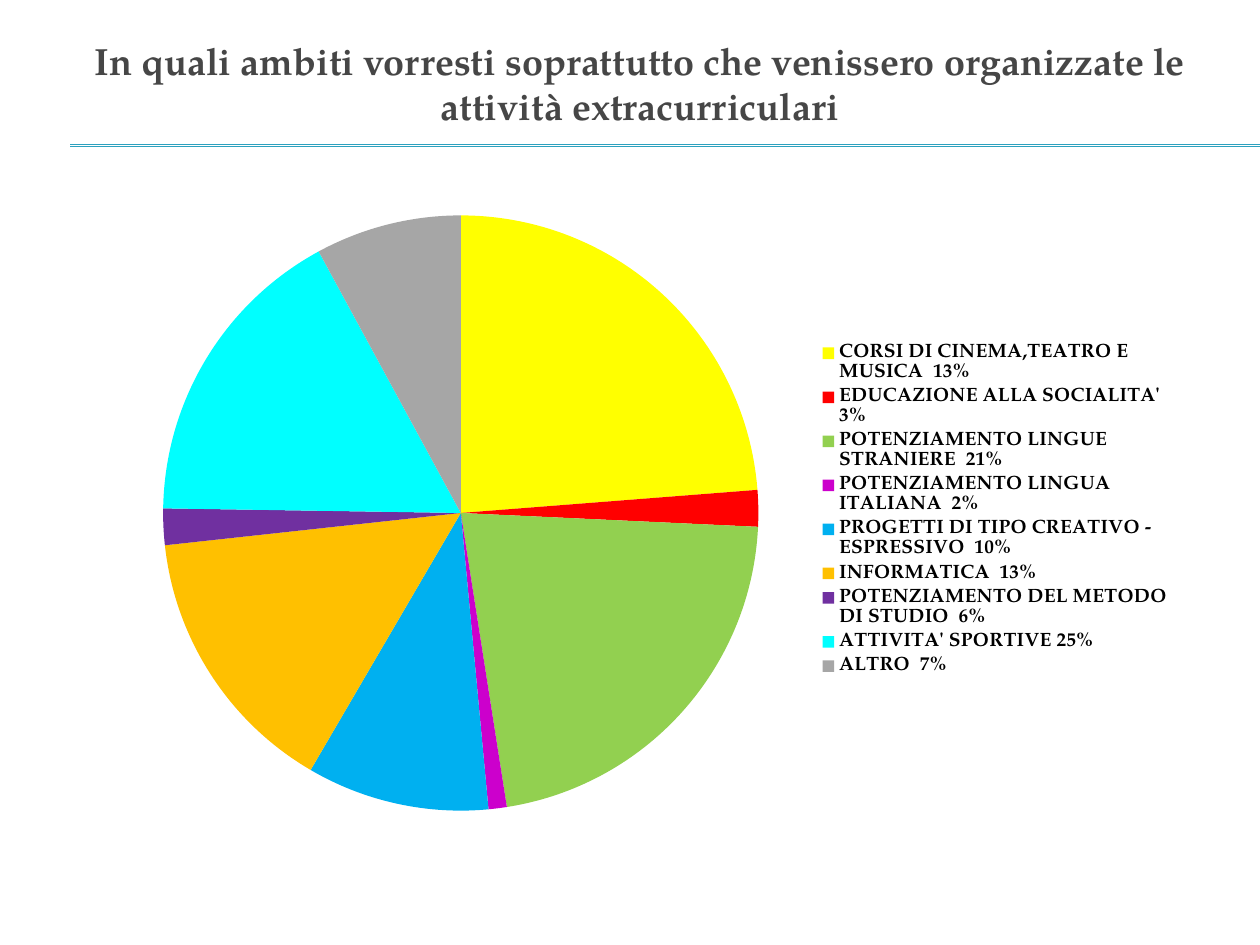
from dataclasses import dataclass

import lxml.etree
import pptx
import pptx.chart.data
import pptx.dml.color
import pptx.enum.chart
import pptx.enum.shapes
import pptx.enum.text
import pptx.oxml
import pptx.oxml.ns
import pptx.util
from pptx.dml.color import RGBColor
from pptx.util import Cm, Pt

FONT = "TeX Gyre Pagella"
TITLE_GRAY = RGBColor(0x46, 0x46, 0x46)
RULE_TEAL = RGBColor(0x2D, 0xA2, 0xBF)
BLACK = RGBColor(0, 0, 0)


@dataclass(frozen=True)
class Activity:
    label: str
    value: int
    color: RGBColor


ACTIVITIES = [
    Activity("CORSI DI CINEMA,TEATRO E MUSICA  13%", 24, RGBColor(0xFF, 0xFF, 0x00)),
    Activity("EDUCAZIONE ALLA SOCIALITA'  3%", 2, RGBColor(0xFF, 0x00, 0x00)),
    Activity("POTENZIAMENTO LINGUE STRANIERE  21%", 22, RGBColor(0x92, 0xD0, 0x50)),
    Activity("POTENZIAMENTO LINGUA ITALIANA  2%", 1, RGBColor(0xCC, 0x00, 0xCC)),
    Activity("PROGETTI DI TIPO CREATIVO - ESPRESSIVO  10%", 10, RGBColor(0x00, 0xB0, 0xF0)),
    Activity("INFORMATICA  13%", 15, RGBColor(0xFF, 0xC0, 0x00)),
    Activity("POTENZIAMENTO DEL METODO DI STUDIO  6%", 2, RGBColor(0x70, 0x30, 0xA0)),
    Activity("ATTIVITA' SPORTIVE 25%", 17, RGBColor(0x00, 0xFF, 0xFF)),
    Activity("ALTRO  7%", 8, RGBColor(0xA6, 0xA6, 0xA6)),
]


def add_rule(page, top: float) -> None:
    """Draw a thin line from the left margin to the right edge."""
    rule = page.shapes.add_connector(
        pptx.enum.shapes.MSO_CONNECTOR.STRAIGHT, Cm(1.42), Cm(top), Cm(25.4), Cm(top))
    rule.line.color.rgb = RULE_TEAL
    rule.line.width = Pt(0.75)
    effects = pptx.oxml.ns.qn("a:effectLst")
    lxml.etree.SubElement(rule.element.spPr, effects)


def make_layout(x: float, y: float, w: float, h: float, inner: bool = False):
    """Return a manual chart layout, in fractions of the chart."""
    target = '<c:layoutTarget val="inner"/>' if inner else ""
    modes = '<c:xMode val="edge"/><c:yMode val="edge"/>'
    sizes = "".join(f'<c:{name} val="{value}"/>'
                    for name, value in zip("xywh", (x, y, w, h)))
    return pptx.oxml.parse_xml(
        f'<c:layout {pptx.oxml.ns.nsdecls("c")}><c:manualLayout>'
        f"{target}{modes}{sizes}</c:manualLayout></c:layout>")


def add_title(page, text: str) -> None:
    box = page.shapes.title
    box.left, box.top, box.width, box.height = Cm(0.84), Cm(0.58), Cm(24.13), Cm(2.18)
    frame = box.text_frame
    frame.text = text
    frame.word_wrap = True
    frame.vertical_anchor = pptx.enum.text.MSO_ANCHOR.MIDDLE
    para = frame.paragraphs[0]
    para.alignment = pptx.enum.text.PP_ALIGN.CENTER
    font = para.runs[0].font
    font.name, font.size, font.bold = FONT, Pt(21.6), True
    font.color.rgb = TITLE_GRAY


def add_pie(page, activities: list[Activity]) -> None:
    data = pptx.chart.data.CategoryChartData()
    data.categories = [activity.label for activity in activities]
    data.add_series("Series 1", [activity.value for activity in activities])
    chart = page.shapes.add_chart(
        pptx.enum.chart.XL_CHART_TYPE.PIE,
        Cm(1.98), Cm(3.89), Cm(21.82), Cm(12.78), data).chart
    chart.has_title = False
    chart.font.name, chart.font.size = FONT, Pt(18)
    chart.font.color.rgb = BLACK

    # Slice colours
    plot = chart.plots[0]
    plot.vary_by_categories = True
    for index, activity in enumerate(activities):
        fill = plot.series[0].points[index].format.fill
        fill.solid()
        fill.fore_color.rgb = activity.color

    # Legend
    chart.has_legend = True
    legend = chart.legend
    legend.position = pptx.enum.chart.XL_LEGEND_POSITION.RIGHT
    legend.include_in_layout = True
    legend.font.name, legend.font.size, legend.font.bold = FONT, Pt(11), True
    legend.font.color.rgb = BLACK

    # Fixed places for the pie and the legend
    for layout in chart.element.xpath(".//c:plotArea/c:layout | .//c:legend/c:layout"):
        layout.getparent().remove(layout)
    plot_area = chart.element.xpath(".//c:plotArea")[0]
    plot_area.insert(0, make_layout(0.06, 0.03, 0.55, 0.95, inner=True))
    legend_position = chart.element.xpath(".//c:legend/c:legendPos")[0]
    legend_position.addnext(make_layout(0.67, 0.23, 0.32, 0.54))


def main() -> None:
    deck = pptx.Presentation()
    deck.slide_width, deck.slide_height = Cm(25.4), Cm(19.05)
    page = deck.slides.add_slide(deck.slide_layouts[5])

    # Double rule under the title
    for top in (2.92, 2.95):
        add_rule(page, top)

    add_title(page, "In quali ambiti vorresti soprattutto che venissero "
                    "organizzate le attività extracurriculari")
    add_pie(page, ACTIVITIES)
    deck.save("out.pptx")


if __name__ == "__main__":
    main()
